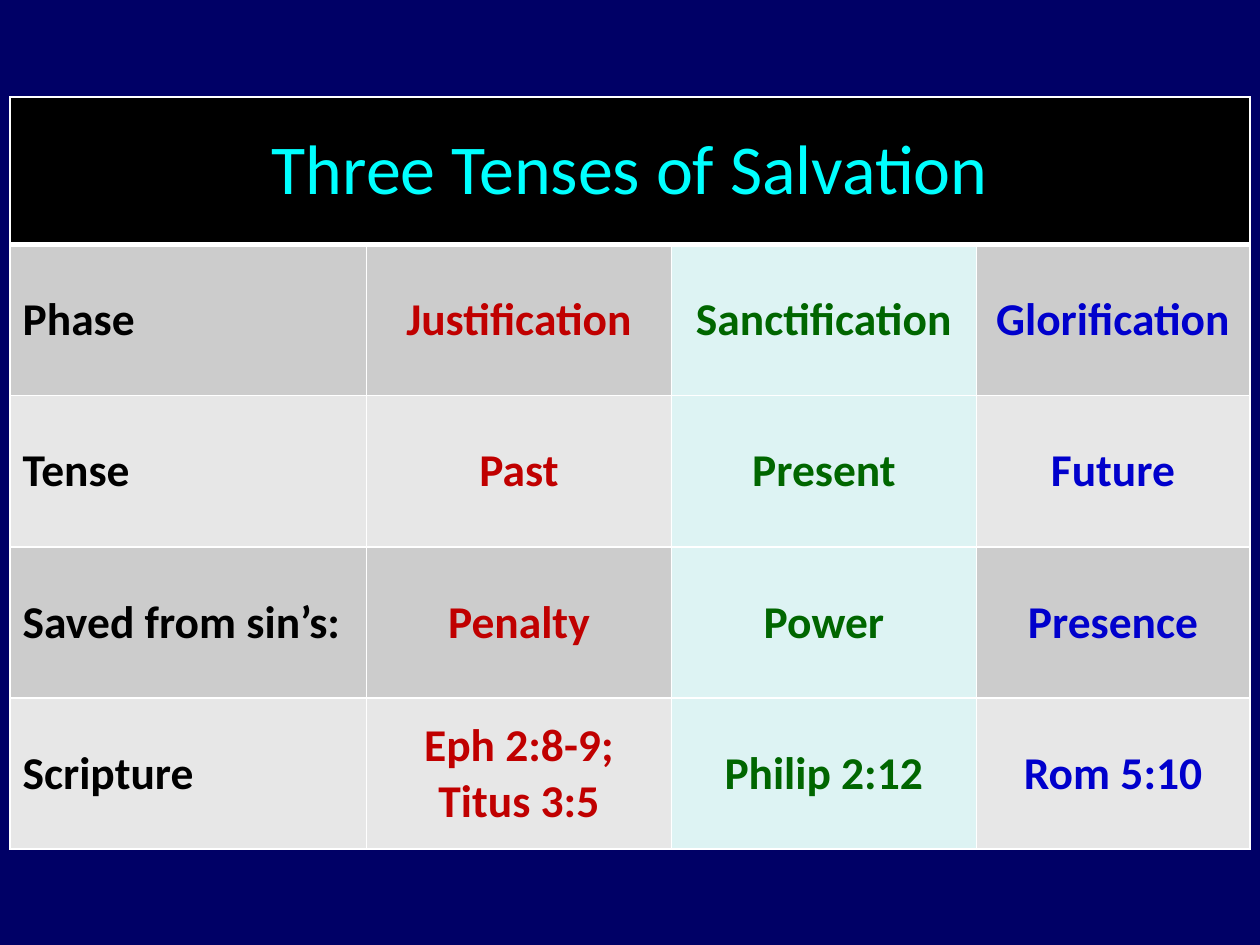
import pptx
import pptx.util
import pptx.dml.color
import pptx.enum.text
import pptx.oxml.ns
import lxml.etree

Inches, Pt = pptx.util.Inches, pptx.util.Pt
RGBColor = pptx.dml.color.RGBColor
PP_ALIGN = pptx.enum.text.PP_ALIGN

HEADING = "Three Tenses of Salvation"
TENSES = [
    ("Phase", "Justification", "Sanctification", "Glorification"),
    ("Tense", "Past", "Present", "Future"),
    ("Saved from sin’s:", "Penalty", "Power", "Presence"),
    ("Scripture", "Eph 2:8-9; Titus 3:5", "Philip 2:12", "Rom 5:10"),
]
COLORS = {
    "background": "000066", "border": "FFFFFF",
    "heading": "00FFFF", "heading_fill": "000000",
    "label": "000000", "past": "C00000", "present": "006600", "future": "0000CC",
    "dark_band": "CCCCCC", "light_band": "E7E7E7", "present_fill": "DDF3F3",
}
COLUMN_COLORS = ("label", "past", "present", "future")
COLUMN_WIDTHS = (2.83, 2.42, 2.42, 2.17)
HEADING_HEIGHT, ROW_HEIGHT = 1.17, 1.2
LEFT, TOP = 0.08, 0.77
FONT = "Calibri"


def rgb(name):
    return RGBColor.from_string(COLORS[name])


def add_borders(cell, bottom=1):
    """Draw all four cell edges; call before the fill, which must follow them."""
    properties = cell._tc.get_or_add_tcPr()
    qn = pptx.oxml.ns.qn
    for edge, width in (("L", 1), ("R", 1), ("T", 1), ("B", bottom)):
        line = lxml.etree.SubElement(properties, qn(f"a:ln{edge}"), w=str(Pt(width)))
        solid = lxml.etree.SubElement(line, qn("a:solidFill"))
        lxml.etree.SubElement(solid, qn("a:srgbClr"), val=COLORS["border"])


def write_cell(cell, text, color, fill, size, bold, align):
    cell.fill.solid()
    cell.fill.fore_color.rgb = rgb(fill)
    cell.vertical_anchor = pptx.enum.text.MSO_ANCHOR.MIDDLE
    paragraph = cell.text_frame.paragraphs[0]
    paragraph.alignment = align
    run = paragraph.add_run()
    run.text = text
    run.font.name = FONT
    run.font.size = Pt(size)
    run.font.bold = bold
    run.font.color.rgb = rgb(color)


def main():
    deck = pptx.Presentation()
    deck.slide_width, deck.slide_height = Inches(10), Inches(7.5)
    slide = deck.slides.add_slide(deck.slide_layouts[6])
    slide.background.fill.solid()
    slide.background.fill.fore_color.rgb = rgb("background")

    heights = [HEADING_HEIGHT] + [ROW_HEIGHT] * len(TENSES)
    table = slide.shapes.add_table(
        len(heights), len(COLUMN_WIDTHS), Inches(LEFT), Inches(TOP),
        Inches(sum(COLUMN_WIDTHS)), Inches(sum(heights))).table
    for column, width in zip(table.columns, COLUMN_WIDTHS):
        column.width = Inches(width)
    for row, height in zip(table.rows, heights):
        row.height = Inches(height)

    heading_cell = table.cell(0, 0)
    heading_cell.merge(table.cell(0, len(COLUMN_WIDTHS) - 1))
    for cell in table.rows[0].cells:
        add_borders(cell, bottom=3)
    write_cell(heading_cell, HEADING, "heading", "heading_fill", 40, False, PP_ALIGN.CENTER)

    for r, entries in enumerate(TENSES):
        band = "light_band" if r % 2 else "dark_band"
        for c, (text, color) in enumerate(zip(entries, COLUMN_COLORS)):
            cell = table.cell(r + 1, c)
            add_borders(cell)
            fill = "present_fill" if color == "present" else band
            align = PP_ALIGN.LEFT if color == "label" else PP_ALIGN.CENTER
            write_cell(cell, text, color, fill, 26, True, align)

    deck.save("out.pptx")


if __name__ == "__main__":
    main()
